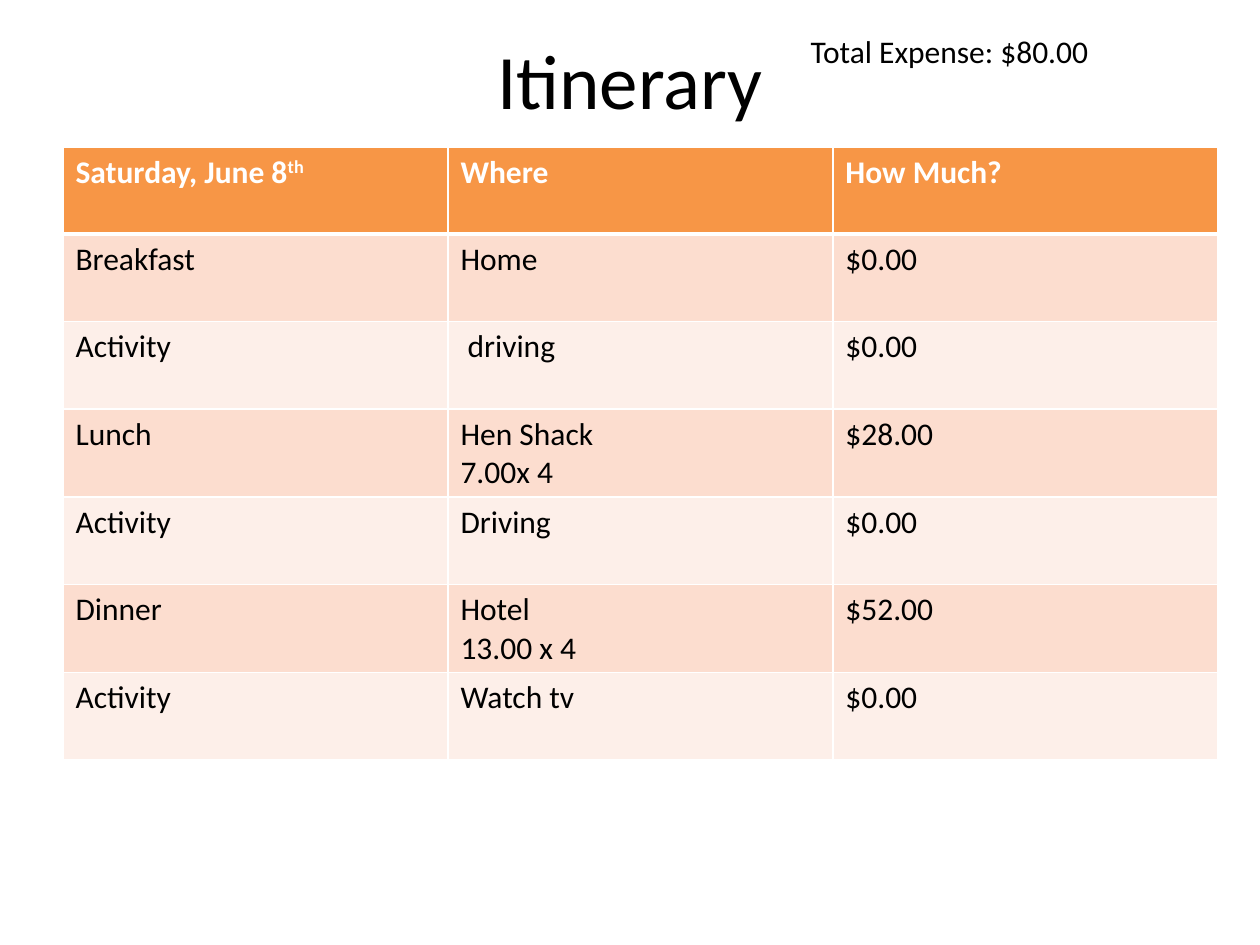
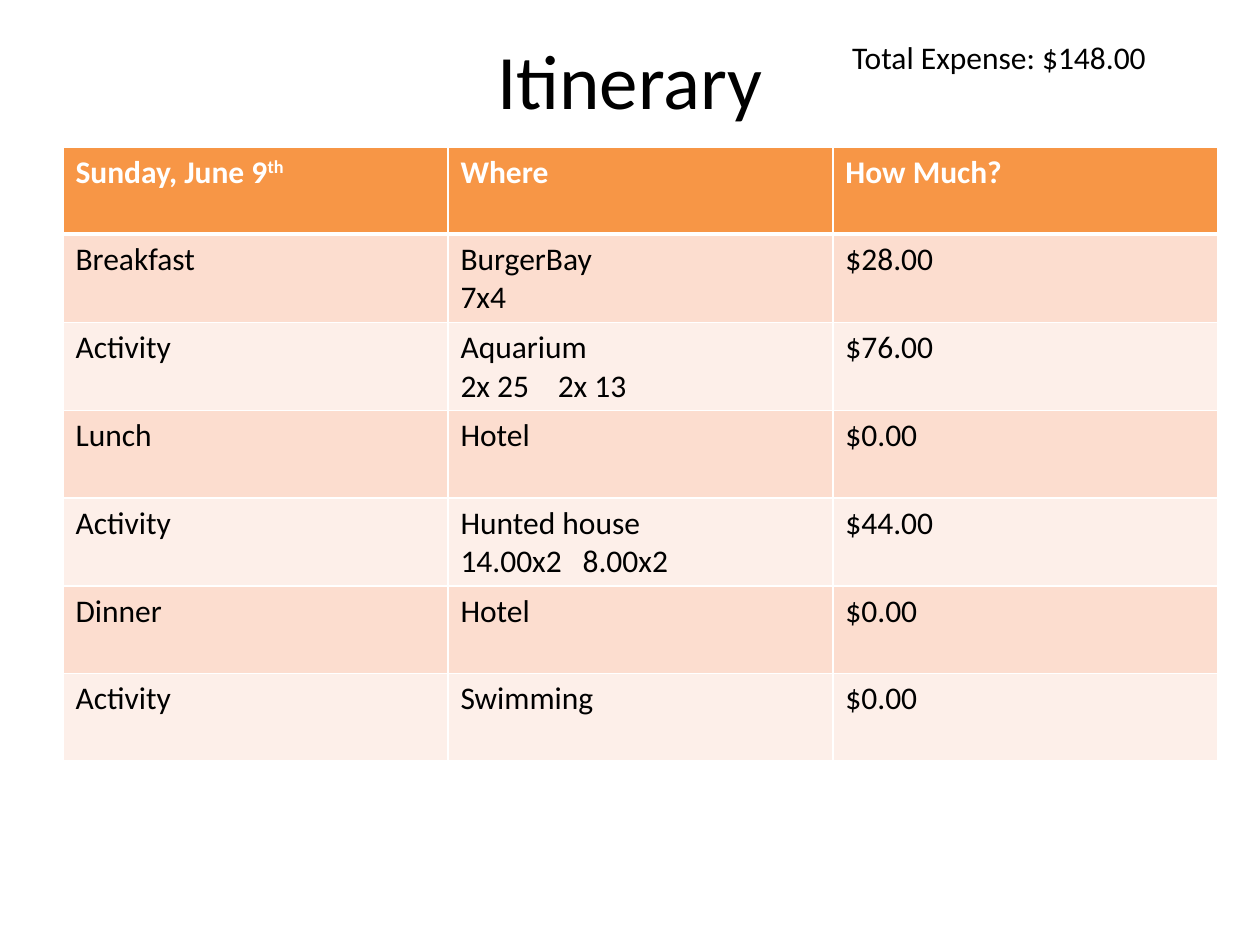
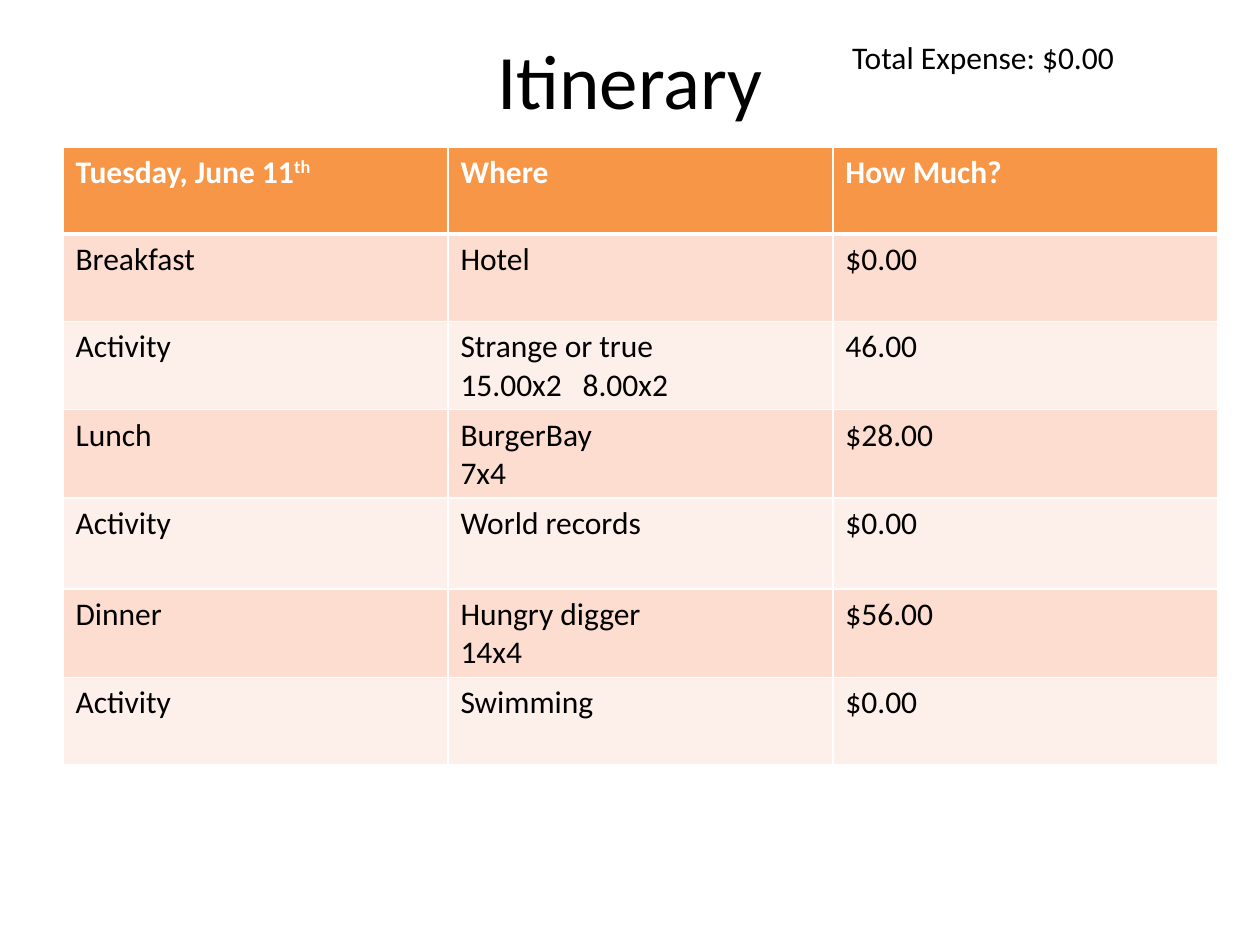
"""Build a three-day trip itinerary with a cost table for each day."""
from dataclasses import dataclass

from lxml.etree import SubElement
from pptx import Presentation
from pptx.dml.color import RGBColor
from pptx.enum.text import MSO_ANCHOR, MSO_AUTO_SIZE, PP_ALIGN
from pptx.oxml import parse_xml
from pptx.oxml.ns import nsdecls, qn
from pptx.util import Cm, Pt

WHITE, BLACK, ORANGE = "FFFFFF", "000000", "F79646"
BANDS = ("FCDDCF", "FDEFE9")
LABELS = ("Breakfast", "Activity", "Lunch", "Activity", "Dinner", "Activity")
COLUMN_WIDTH, ROW_HEIGHT = 7.76, 1.76
THIN, THICK = 1, 3


@dataclass(frozen=True)
class Entry:
    where: str
    cost: str
    tab: float = 0
    height: float = ROW_HEIGHT


@dataclass(frozen=True)
class Day:
    date: str
    total: str
    total_left: float
    total_top: float
    entries: tuple[Entry, ...]


DAYS = (
    Day("Saturday, June 8", "$80.00", 16.09, 0.53, (
        Entry("Home", "$0.00"),
        Entry(" driving", "$0.00"),
        Entry("Hen Shack\n7.00x 4", "$28.00"),
        Entry("Driving", "$0.00"),
        Entry("Hotel\n13.00 x 4", "$52.00"),
        Entry("Watch tv", "$0.00"),
    )),
    Day("Sunday, June 9", "$148.00", 16.93, 0.64, (
        Entry("BurgerBay\n7x4", "$28.00"),
        Entry("Aquarium\n2x 25\t2x 13", "$76.00", tab=1.96),
        Entry("Hotel", "$0.00"),
        Entry("Hunted house\n14.00x2\t8.00x2", "$44.00", tab=2.46),
        Entry("Hotel", "$0.00"),
        Entry("Swimming", "$0.00"),
    )),
    Day("Tuesday, June 11", "$0.00", 16.93, 0.64, (
        Entry("Hotel", "$0.00"),
        Entry("Strange or true\n15.00x2\t8.00x2", "46.00", tab=2.46),
        Entry("BurgerBay\n7x4", "$28.00"),
        Entry("World records", "$0.00", height=1.84),
        Entry("Hungry digger\n14x4", "$56.00"),
        Entry("Swimming", "$0.00"),
    )),
)


def rgb(value: str) -> RGBColor:
    """Turn a hex string into a colour."""
    return RGBColor.from_string(value)


def style(span, size: int = 18, color: str = BLACK, bold: bool = False) -> None:
    """Format one run of text."""
    values = {"name": "Calibri", "size": Pt(size), "bold": bold}
    for name, value in values.items():
        setattr(span.font, name, value)
    span.font.color.rgb = rgb(color)


def write(frame, text: str, **format_values) -> None:
    """Fill a text frame, one paragraph a line."""
    for index, line in enumerate(text.split("\n")):
        para = frame.add_paragraph() if index else frame.paragraphs[0]
        span = para.add_run()
        span.text = line
        style(span, **format_values)


def add_superscript(para, text: str, **format_values) -> None:
    """Add a raised run to a paragraph."""
    span = para.add_run()
    span.text = text
    style(span, **format_values)
    span._r.get_or_add_rPr().set("baseline", "30000")


def add_tab_stop(para, position: float) -> None:
    """Give a paragraph one left tab stop."""
    stops = SubElement(para._p.get_or_add_pPr(), qn("a:tabLst"))
    SubElement(stops, qn("a:tab"), pos=str(int(Cm(position))), algn="l")


def paint(cell, fill: str, top: int = THIN, bottom: int = THIN) -> None:
    """Set the fill and the white borders of a cell."""
    cell.fill.solid()
    cell.fill.fore_color.rgb = rgb(fill)
    widths = {"lnL": THIN, "lnR": THIN, "lnT": top, "lnB": bottom}
    properties = cell._tc.get_or_add_tcPr()
    for index, (side, width) in enumerate(widths.items()):
        properties.insert(index, parse_xml(
            f'<a:{side} {nsdecls("a")} w="{int(Pt(width))}"><a:solidFill>'
            f'<a:srgbClr val="{WHITE}"/></a:solidFill></a:{side}>'))


def add_title(page) -> None:
    """Place and format the title."""
    title = page.shapes.title
    place = {"left": Cm(1.27), "top": Cm(0), "width": Cm(22.86), "height": Cm(3.18)}
    for name, value in place.items():
        setattr(title, name, value)
    write(title.text_frame, "Itinerary", size=44)
    title.text_frame.vertical_anchor = MSO_ANCHOR.MIDDLE
    title.text_frame.paragraphs[0].alignment = PP_ALIGN.CENTER


def add_total(page, day: Day) -> None:
    """Add the day's total expense."""
    box = page.shapes.add_textbox(Cm(day.total_left), Cm(day.total_top), Cm(7.82), Cm(1.02))
    box.text_frame.word_wrap = True
    box.text_frame.auto_size = MSO_AUTO_SIZE.SHAPE_TO_FIT_TEXT
    write(box.text_frame, f"Total Expense: {day.total}")


def add_schedule(page, day: Day) -> None:
    """Add the table of meals and activities."""
    heights = [ROW_HEIGHT] + [entry.height for entry in day.entries]
    headings = (day.date, "Where", "How Much?")
    table = page.shapes.add_table(
        len(heights), len(headings), Cm(1.27), Cm(2.96),
        Cm(COLUMN_WIDTH * len(headings)), Cm(sum(heights))).table
    for column in table.columns:
        column.width = Cm(COLUMN_WIDTH)
    for row, height in zip(table.rows, heights):
        row.height = Cm(height)

    heading_format = {"color": WHITE, "bold": True}
    for index, heading in enumerate(headings):
        cell = table.cell(0, index)
        write(cell.text_frame, heading, **heading_format)
        paint(cell, ORANGE, bottom=THICK)
    add_superscript(table.cell(0, 0).text_frame.paragraphs[0], "th", **heading_format)

    for number, (label, entry) in enumerate(zip(LABELS, day.entries), start=1):
        for index, text in enumerate((label, entry.where, entry.cost)):
            cell = table.cell(number, index)
            write(cell.text_frame, text)
            paint(cell, BANDS[(number - 1) % 2], top=THICK if number == 1 else THIN)
        if entry.tab:
            add_tab_stop(table.cell(number, 1).text_frame.paragraphs[-1], entry.tab)


def main() -> None:
    """Build and save the deck."""
    deck = Presentation()
    deck.slide_width, deck.slide_height = Cm(25.4), Cm(19.05)
    for day in DAYS:
        page = deck.slides.add_slide(deck.slide_layouts[5])
        add_title(page)
        add_total(page, day)
        add_schedule(page, day)
    deck.save("out.pptx")


if __name__ == "__main__":
    main()
